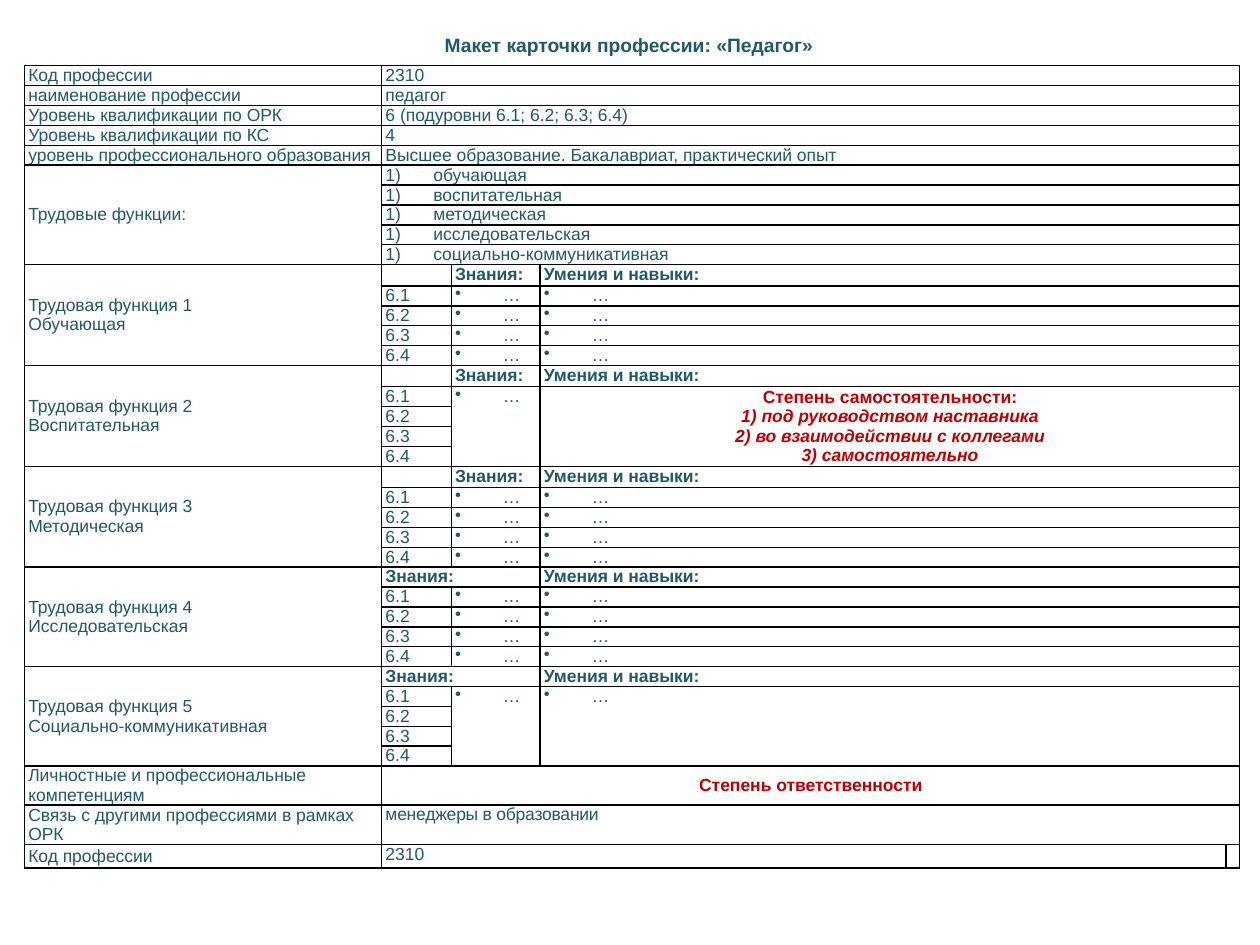
from dataclasses import dataclass

from lxml.etree import SubElement
from pptx import Presentation
from pptx.dml.color import RGBColor
from pptx.enum.text import MSO_ANCHOR, MSO_AUTO_SIZE, PP_ALIGN
from pptx.oxml import parse_xml
from pptx.oxml.ns import nsdecls, qn
from pptx.util import Inches, Pt


@dataclass(frozen=True)
class Theme:
    font: str = "Arial"
    text: RGBColor = RGBColor(0x21, 0x59, 0x68)
    accent: RGBColor = RGBColor(0xC0, 0x00, 0x00)
    border: str = "000000"
    border_width: int = Pt(1)
    body: int = Pt(10)
    title: int = Pt(11)
    inset: int = Inches(0.03)
    indent: int = Inches(0.38)


THEME = Theme()
W, H = Inches(10), Inches(7.5)

# Boxes, columns and rows in percent of the slide
TITLE_BOX = (34.3, 2.8, 31.5, 3.87)
TABLE_BOX = (1.95, 6.95, 96.5, 89.2)
COLUMNS = (28.35, 5.52, 7.06, 54.44, 1.07)
ROWS = [2.11] * 35 + [3.07, 2.53, 2.53]

GENERAL = [
    ("Код профессии", "2310"),
    ("наименование профессии", "педагог"),
    ("Уровень квалификации по ОРК", "6 (подуровни 6.1; 6.2; 6.3; 6.4)"),
    ("Уровень квалификации по КС", "4"),
    ("уровень профессионального образования",
     "Высшее образование. Бакалавриат, практический опыт"),
]
FUNCTIONS = ["Обучающая", "Воспитательная", "Методическая",
             "Исследовательская", "Социально-коммуникативная"]
LEVELS = ["6.1", "6.2", "6.3", "6.4"]
INDEPENDENCE = ["Степень самостоятельности:", "1) под руководством наставника",
                "2) во взаимодействии с коллегами", "3) самостоятельно"]
JOINED_BODY = {2, 5}    # functions whose four levels share one cell
JOINED_HEAD = {4, 5}    # functions whose heading also covers the level column

BULLETS = {"dot": ("a:buChar", {"char": "•"}),
           "number": ("a:buAutoNum", {"type": "arabicParenR"})}
JUSTIFY, CENTER = PP_ALIGN.JUSTIFY, PP_ALIGN.CENTER
TOP, MIDDLE = MSO_ANCHOR.TOP, MSO_ANCHOR.MIDDLE


def scale(box):
    return [int(v * side / 100) for v, side in zip(box, (W, H, W, H))]


def add_text(p, text, color=THEME.text, **formats):
    r = p.add_run()
    r.text = text
    r.font.color.rgb = color
    for name, value in {"name": THEME.font, "size": THEME.body, **formats}.items():
        setattr(r.font, name, value)
    return r


def style_cell(cell):
    """Plain cell with a full border and small type, even when empty."""
    for name, value in {"margin_left": THEME.inset, "margin_right": THEME.inset,
                        "margin_top": 0, "margin_bottom": 0}.items():
        setattr(cell, name, value)
    cell.fill.background()
    tc_pr = cell._tc.get_or_add_tcPr()
    for i, side in enumerate("LRTB"):
        tc_pr.insert(i, parse_xml(
            f'<a:ln{side} {nsdecls("a")} w="{THEME.border_width}"><a:solidFill>'
            f'<a:srgbClr val="{THEME.border}"/></a:solidFill></a:ln{side}>'))
    end = SubElement(cell.text_frame.paragraphs[0]._p, qn("a:endParaRPr"))
    end.set("sz", str(int(THEME.body.pt * 100)))


def put(table, row, col, lines, span=(1, 1), anchor=TOP, align=JUSTIFY,
        bullet=None, **formats):
    """Fill a cell, merged over span rows and columns; return its runs."""
    cell = table.cell(row, col)
    if span != (1, 1):
        cell.merge(table.cell(row + span[0] - 1, col + span[1] - 1))
    cell.vertical_anchor = anchor
    tf = cell.text_frame
    runs = []
    for i, line in enumerate(lines):
        p = tf.add_paragraph() if i else tf.paragraphs[0]
        p.alignment = align
        if bullet:
            p_pr = p._p.get_or_add_pPr()
            p_pr.set("marL", str(THEME.indent))
            p_pr.set("indent", str(-THEME.indent))
            tag, attributes = BULLETS[bullet]
            SubElement(p_pr, qn(tag), attributes)
        runs.append(add_text(p, line, **formats))
    return runs


def put_label(table, row, *lines, rows=1):
    put(table, row, 0, lines, (rows, 1), MIDDLE, PP_ALIGN.LEFT)


def general_rows(table, row):
    for i, (label, value) in enumerate(GENERAL, row):
        put_label(table, i, label)
        put(table, i, 1, [value], (1, 4), MIDDLE)


def function_list(table, row):
    put_label(table, row, "Трудовые функции:", rows=len(FUNCTIONS))
    for i, name in enumerate(FUNCTIONS, row):
        put(table, i, 1, [name.lower()], (1, 4), MIDDLE, PP_ALIGN.LEFT, "number")


def function_block(table, row, number, name):
    put_label(table, row, f"Трудовая функция {number}", name, rows=len(LEVELS) + 1)
    # Heading
    col, width = (1, 2) if number in JOINED_HEAD else (2, 1)
    put(table, row, col, ["Знания:"], (1, width), bold=True)
    put(table, row, 3, ["Умения и навыки:"], (1, 2), bold=True)
    # Levels with knowledge and skills
    joined = number in JOINED_BODY
    height = len(LEVELS) if joined else 1
    for i, level in enumerate(LEVELS):
        at = row + 1 + i
        put(table, at, 1, [level])
        if joined and i:
            continue
        put(table, at, 2, ["…"], (height, 1), bullet="dot")
        if number == 2:
            runs = put(table, at, 3, INDEPENDENCE, (height, 2), MIDDLE, CENTER,
                       color=THEME.accent, bold=True)
            for r in runs[1:]:
                r.font.italic = True
        else:
            put(table, at, 3, ["…"], (height, 2), bullet="dot")


def closing_rows(table, row):
    put_label(table, row, "Личностные и профессиональные компетенциям")
    put(table, row, 1, ["Степень ответственности"], (1, 4), MIDDLE, CENTER,
        color=THEME.accent, bold=True)
    put_label(table, row + 1, "Связь с другими профессиями в рамках ОРК")
    runs = put(table, row + 1, 1, ["менеджеры в образовании"], (1, 4),
               align=PP_ALIGN.LEFT)
    runs[0].font._element.set("spc", "-10")
    put_label(table, row + 2, "Код профессии")
    put(table, row + 2, 1, ["2310"], (1, 3), align=PP_ALIGN.LEFT)


def profession_table(s, box):
    x, y, w, h = scale(box)
    frame = s.shapes.add_table(len(ROWS), len(COLUMNS), x, y, w, h)
    table = frame.table
    table.first_row = table.horz_banding = False
    for column, share in zip(table.columns, COLUMNS):
        column.width = int(W * share / 100)
    for line, share in zip(table.rows, ROWS):
        line.height = int(H * share / 100)
    frame.height = h
    for cell in table.iter_cells():
        style_cell(cell)

    general_rows(table, 0)
    first = len(GENERAL)
    function_list(table, first)
    first += len(FUNCTIONS)
    for number, name in enumerate(FUNCTIONS, 1):
        function_block(table, first, number, name)
        first += len(LEVELS) + 1
    closing_rows(table, first)


def title(s, box):
    tf = s.shapes.add_textbox(*scale(box)).text_frame
    for name, value in {"word_wrap": False, "vertical_anchor": MIDDLE,
                        "auto_size": MSO_AUTO_SIZE.SHAPE_TO_FIT_TEXT}.items():
        setattr(tf, name, value)
    add_text(tf.paragraphs[0], "Макет карточки профессии: «Педагог»",
             size=THEME.title, bold=True)


def main():
    prs = Presentation()
    prs.slide_width, prs.slide_height = W, H
    s = prs.slides.add_slide(prs.slide_layouts[6])
    profession_table(s, TABLE_BOX)
    title(s, TITLE_BOX)
    prs.save("out.pptx")


if __name__ == "__main__":
    main()
